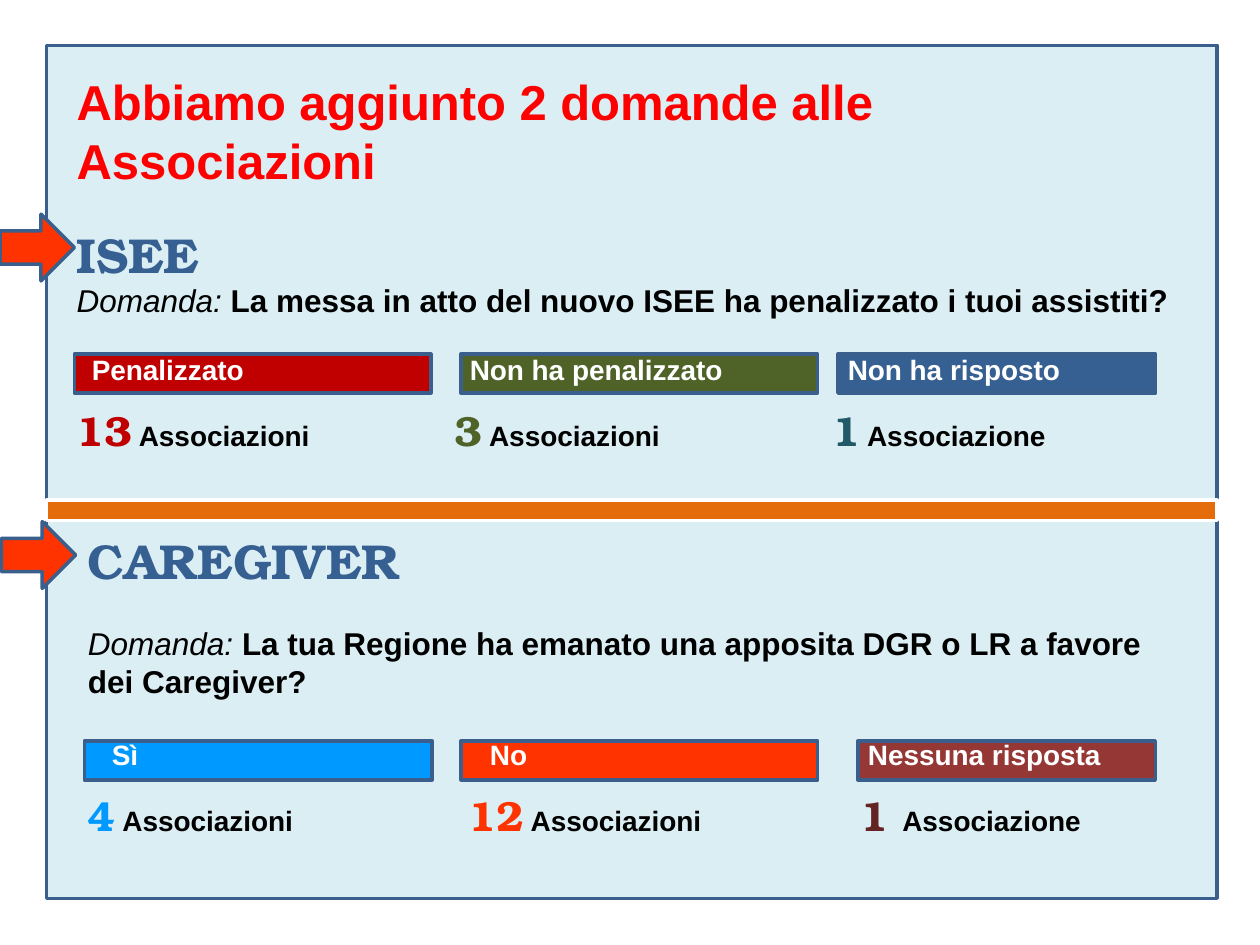
from dataclasses import dataclass

from lxml import etree
from pptx import Presentation
from pptx.dml.color import RGBColor
from pptx.enum import shapes, text
from pptx.oxml.ns import qn
from pptx.util import Emu, Inches, Pt

COLUMNS, ROWS = 100, 75
WIDTH, HEIGHT = Inches(10), Inches(7.5)
SANS, SERIF = "Arial", "TeX Gyre Bonum"
BLUE, BORDER, BLACK, WHITE, SCARLET = "376092", "3A5F8C", "000000", "FFFFFF", "FF3300"


@dataclass
class Area:
    column: float
    row: float
    columns: float
    rows: float

    def lengths(self) -> tuple:
        across, down = WIDTH / COLUMNS, HEIGHT / ROWS
        return (Emu(round(self.column * across)), Emu(round(self.row * down)),
                Emu(round(self.columns * across)), Emu(round(self.rows * down)))


@dataclass
class Span:
    words: str
    size: float
    color: str = BLACK
    face: str = SANS
    bold: bool = True
    italic: bool = False


@dataclass
class Line:
    spans: list
    height: float
    before: float = 0
    stops: tuple = ()


@dataclass
class Answer:
    label: str
    count: str
    noun: str
    bar_color: str
    count_color: str
    bar_column: float
    bar_columns: float


@dataclass
class Section:
    area: Area
    opening: list
    answers: list
    bar_row: float
    label_gap: float
    label_stops: tuple
    count_stops: tuple


def rgb(value: str) -> RGBColor:
    return RGBColor.from_string(value)


def draw_shape(slide, kind, area: Area, fill: str, border: str = BORDER) -> None:
    shape = slide.shapes.add_shape(kind, *area.lengths())
    shape.shadow.inherit = False
    shape.fill.solid()
    shape.fill.fore_color.rgb = rgb(fill)
    shape.line.color.rgb = rgb(border)
    shape.line.width = Pt(2)


def add_stops(paragraph, stops: tuple) -> None:
    tab_list = etree.SubElement(paragraph._p.get_or_add_pPr(), qn("a:tabLst"))
    for stop in stops:
        etree.SubElement(tab_list, qn("a:tab"), pos=str(Inches(stop)), algn="l")


def write_line(paragraph, line: Line) -> None:
    paragraph.line_spacing = Pt(line.height)
    paragraph.space_before = Pt(line.before)
    if line.stops:
        add_stops(paragraph, line.stops)
    for span in line.spans:
        run = paragraph.add_run()
        run.text = span.words
        run.font.color.rgb = rgb(span.color)
        formats = {"size": Pt(span.size), "name": span.face,
                   "bold": span.bold, "italic": span.italic}
        for key, value in formats.items():
            setattr(run.font, key, value)


def answer_lines(section: Section) -> list:
    labels = [Span("\t" + answer.label, 16, WHITE) for answer in section.answers]
    counts = []
    for place, answer in enumerate(section.answers):
        lead = "\t" if place else ""
        counts += [Span(lead + answer.count, 24, answer.count_color, SERIF),
                   Span(answer.noun, 16)]
    return [Line(labels, 18.4, section.label_gap, section.label_stops),
            Line(counts, 28, 11.3, section.count_stops)]


def draw_bars(slide, section: Section) -> None:
    for answer in section.answers:
        bar = Area(answer.bar_column, section.bar_row, answer.bar_columns, 3.1)
        draw_shape(slide, shapes.MSO_SHAPE.RECTANGLE, bar, answer.bar_color)


def draw_text(slide, section: Section) -> None:
    frame = slide.shapes.add_textbox(*section.area.lengths()).text_frame
    settings = {"word_wrap": True, "auto_size": text.MSO_AUTO_SIZE.NONE,
                "vertical_anchor": text.MSO_ANCHOR.TOP, "margin_right": Inches(0.15)}
    for key, value in settings.items():
        setattr(frame, key, value)
    for place, line in enumerate(section.opening + answer_lines(section)):
        paragraph = frame.add_paragraph() if place else frame.paragraphs[0]
        write_line(paragraph, line)


def heading(words: str) -> list:
    return [Span(words, 28, BLUE, SERIF)]


def question(words: str) -> list:
    return [Span("Domanda: ", 18, bold=False, italic=True), Span(words, 18)]


ISEE = Section(
    Area(5.1, 5.2, 89.8, 31.6),
    [Line([Span("Abbiamo aggiunto 2 domande alle Associazioni", 28, "FF0000")], 33.7),
     Line(heading("ISEE"), 34, 19.8),
     Line(question("La messa in atto del nuovo ISEE ha penalizzato i tuoi assistiti?"), 20.1)],
    [Answer("Penalizzato", "13", " Associazioni", "C00000", "C00000", 5.9, 28.3),
     Answer("Non ha penalizzato", "3", " Associazioni", "4F6228", "4F6228", 36.6, 28.3),
     Answer("Non ha risposto", "1", " Associazione", BLUE, "215968", 66.5, 25.2)],
    28.1, 20, (0.12, 3.12, 6.12), (3, 6))

CAREGIVER = Section(
    Area(6, 41.4, 87.3, 25.9),
    [Line(heading("CAREGIVER"), 35),
     Line(question("La tua Regione ha emanato una apposita DGR o LR a favore dei Caregiver?"),
          21.7, 20.1)],
    [Answer("Sì", "4", " Associazioni", "0099FF", "0099FF", 6.7, 27.6),
     Answer("No", "12", " Associazioni", SCARLET, SCARLET, 36.6, 28.3),
     Answer("Nessuna risposta", "1 ", "Associazione", "953735", "632523", 68.1, 23.6)],
    58.8, 22.3, (0.19, 3.19, 6.19), (3.02, 6.13))


def main() -> None:
    deck = Presentation()
    deck.slide_width, deck.slide_height = WIDTH, HEIGHT
    slide = deck.slides.add_slide(deck.slide_layouts[6])
    sections = (ISEE, CAREGIVER)
    rectangle, arrow = shapes.MSO_SHAPE.RECTANGLE, shapes.MSO_SHAPE.RIGHT_ARROW

    draw_shape(slide, rectangle, Area(3.7, 3.6, 92.9, 67.7), "DBEEF4")
    for section in reversed(sections):
        draw_bars(slide, section)
    for section in sections:
        draw_text(slide, section)
    draw_shape(slide, rectangle, Area(3.7, 39.7, 92.9, 1.6), "E46C0A", WHITE)
    for column, row in ((0, 17), (0.1, 41.4)):
        draw_shape(slide, arrow, Area(column, row, 5.9, 5.3), SCARLET)
    deck.save("out.pptx")


if __name__ == "__main__":
    main()
